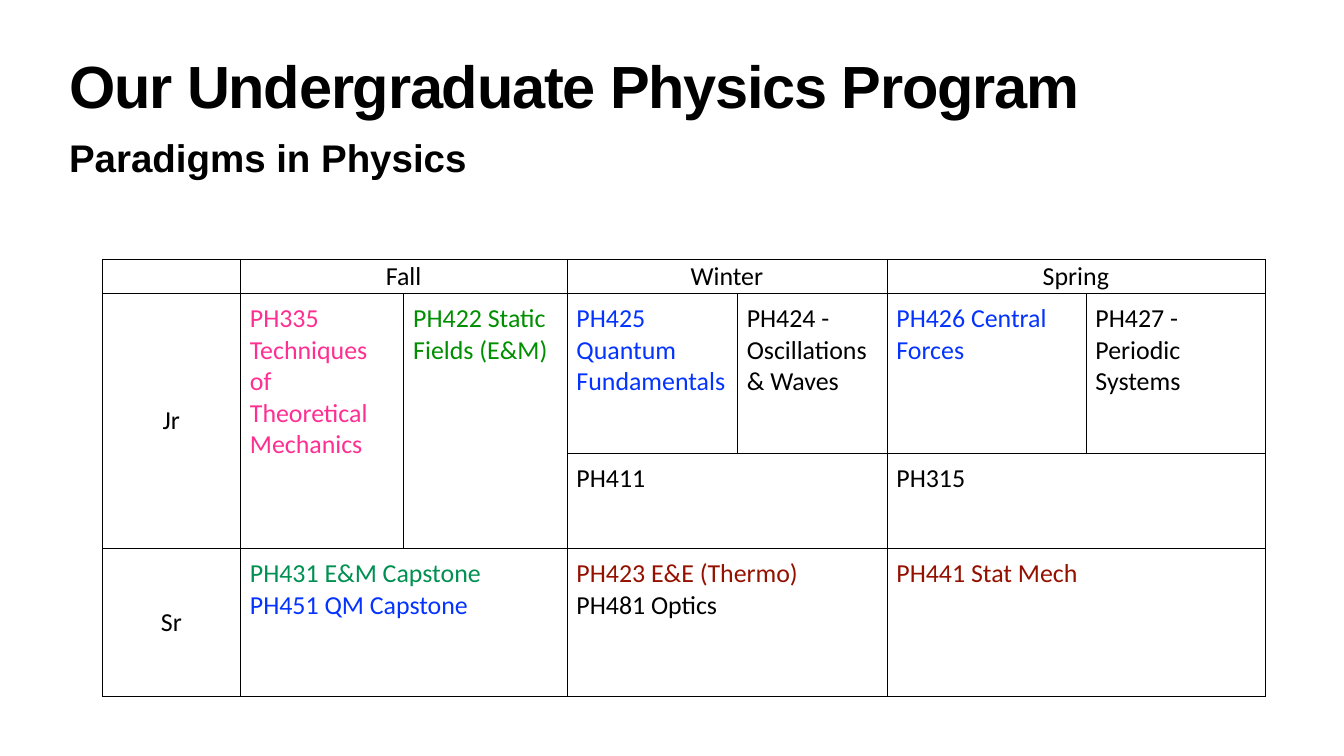
from dataclasses import dataclass

from lxml import etree
from pptx import Presentation
from pptx.dml.color import RGBColor
from pptx.enum.text import MSO_ANCHOR, PP_ALIGN
from pptx.oxml.ns import qn
from pptx.util import Inches, Pt

MIDDLE, TOP = MSO_ANCHOR.MIDDLE, MSO_ANCHOR.TOP
CENTER, LEFT = PP_ALIGN.CENTER, PP_ALIGN.LEFT
WIDTH, HEIGHT = 26.67, 15
BLACK, WHITE, BLUE, PINK = "000000", "FFFFFF", "0433FF", "FF2F92"
GREEN, TEAL, MAROON = "008F00", "009051", "941100"
COLUMNS = (2.74, 3.24, 3.24, 3.38, 2.97, 3.95, 3.55)
ROWS = (0.68, 3.18, 1.88, 2.94)


@dataclass(frozen=True)
class Line:
    text: str
    color: str = BLACK


@dataclass(frozen=True)
class Entry:
    row: int
    column: int
    lines: tuple[Line, ...]
    rows: int = 1
    columns: int = 1
    is_label: bool = False


@dataclass(frozen=True)
class Heading:
    text: str
    top: float
    height: float
    size: int
    inset: float
    line_spacing: float = 1.0
    tracking: int = 0


HEADINGS = (
    Heading("Our Undergraduate Physics Program", 1.18, 1.57, 85, 0.06, 0.8, -170),
    Heading("Paradigms in Physics", 2.6, 1.02, 55, 0.05),
)

TERMS = tuple(
    Entry(0, 1 + 2 * index, (Line(term),), columns=2, is_label=True)
    for index, term in enumerate(("Fall", "Winter", "Spring"))
)

YEARS = (
    Entry(1, 0, (Line("Jr"),), rows=2, is_label=True),
    Entry(3, 0, (Line("Sr"),), is_label=True),
)

COURSES = (
    Entry(1, 1, (Line("PH335 Techniques of Theoretical Mechanics", PINK),), rows=2),
    Entry(1, 2, (Line("PH422 Static Fields (E&M)", GREEN),), rows=2),
    Entry(1, 3, (Line("PH425 Quantum\vFundamentals", BLUE),)),
    Entry(1, 4, (Line("PH424 - Oscillations & Waves"),)),
    Entry(1, 5, (Line("PH426 Central Forces", BLUE),)),
    Entry(1, 6, (Line("PH427 - Periodic Systems"),)),
    Entry(2, 3, (Line("PH411"),), columns=2),
    Entry(2, 5, (Line("PH315"),), columns=2),
    Entry(3, 1, (Line("PH431 E&M Capstone", TEAL), Line("PH451 QM Capstone", BLUE)), columns=2),
    Entry(3, 3, (Line("PH423 E&E (Thermo)", MAROON), Line("PH481 Optics")), columns=2),
    Entry(3, 5, (Line("PH441 Stat Mech", MAROON),), columns=2),
)


def rgb(color: str) -> RGBColor:
    return RGBColor.from_string(color)


def set_font(font, name: str, size: int, color: str, bold: bool = False) -> None:
    font.name = name
    font.size = Pt(size)
    font.bold = bold
    font.color.rgb = rgb(color)


def set_margins(frame, horizontal: float, vertical: float) -> None:
    frame.margin_left = frame.margin_right = Inches(horizontal)
    frame.margin_top = frame.margin_bottom = Inches(vertical)


def add_heading(slide, heading: Heading) -> None:
    box = slide.shapes.add_textbox(
        Inches(1.32), Inches(heading.top), Inches(24.03), Inches(heading.height)
    )
    frame = box.text_frame
    frame.word_wrap = True
    set_margins(frame, heading.inset, heading.inset)
    paragraph = frame.paragraphs[0]
    paragraph.text = heading.text
    paragraph.line_spacing = heading.line_spacing
    set_font(paragraph.font, "Arial", heading.size, BLACK, True)
    if heading.tracking:
        paragraph.runs[0].font._element.set("spc", str(heading.tracking))


def style_cell(cell) -> None:
    cell.fill.solid()
    cell.fill.fore_color.rgb = rgb(WHITE)
    properties = cell._tc.get_or_add_tcPr()
    for index, side in enumerate(("a:lnL", "a:lnR", "a:lnT", "a:lnB")):
        border = etree.Element(qn(side), w=str(Pt(1)))
        fill = etree.SubElement(border, qn("a:solidFill"))
        etree.SubElement(fill, qn("a:srgbClr"), val=BLACK)
        properties.insert(index, border)


def fill_entry(table, entry: Entry) -> None:
    cell = table.cell(entry.row, entry.column)
    if entry.rows * entry.columns > 1:
        cell.merge(
            table.cell(entry.row + entry.rows - 1, entry.column + entry.columns - 1)
        )
    cell.vertical_anchor = MIDDLE if entry.is_label else TOP
    set_margins(cell, *((0.07, 0) if entry.is_label else (0.19, 0.19)))
    frame = cell.text_frame
    for index, line in enumerate(entry.lines):
        paragraph = frame.add_paragraph() if index else frame.paragraphs[0]
        paragraph.text = line.text
        paragraph.alignment = CENTER if entry.is_label else LEFT
        set_font(paragraph.font, "Calibri", 37, line.color)


def add_schedule(slide) -> None:
    table = slide.shapes.add_table(
        len(ROWS), len(COLUMNS), Inches(2.03), Inches(5.14),
        Inches(sum(COLUMNS)), Inches(sum(ROWS)),
    ).table
    table.first_row = table.horz_banding = False
    for column, width in zip(table.columns, COLUMNS):
        column.width = Inches(width)
    for row, height in zip(table.rows, ROWS):
        row.height = Inches(height)
    for cell in table.iter_cells():
        style_cell(cell)
    for entry in TERMS + YEARS + COURSES:
        fill_entry(table, entry)


def main() -> None:
    deck = Presentation()
    deck.slide_width, deck.slide_height = Inches(WIDTH), Inches(HEIGHT)
    slide = deck.slides.add_slide(deck.slide_layouts[6])
    for heading in HEADINGS:
        add_heading(slide, heading)
    add_schedule(slide)
    deck.save("out.pptx")


if __name__ == "__main__":
    main()
